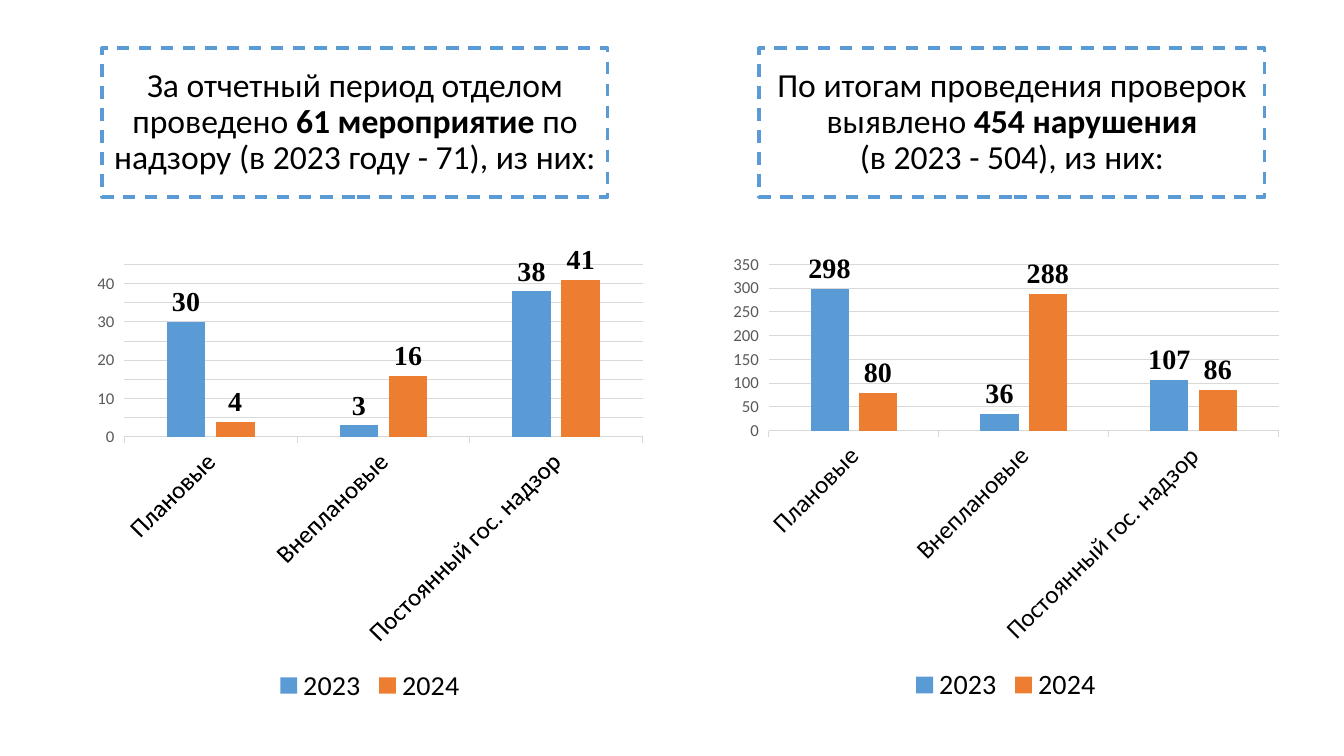
from pptx import Presentation
from pptx.chart.data import CategoryChartData
from pptx.dml.color import RGBColor
from pptx.enum.chart import XL_CHART_TYPE, XL_LABEL_POSITION, XL_LEGEND_POSITION, XL_TICK_MARK
from pptx.enum.dml import MSO_LINE
from pptx.enum.shapes import MSO_SHAPE
from pptx.enum.text import MSO_ANCHOR, PP_ALIGN
from pptx.util import Emu, Pt

COLUMNS = XL_CHART_TYPE.COLUMN_CLUSTERED
OUTSIDE_END = XL_LABEL_POSITION.OUTSIDE_END
BOTTOM = XL_LEGEND_POSITION.BOTTOM
TICK_OUTSIDE = XL_TICK_MARK.OUTSIDE
DASH = MSO_LINE.DASH
RECTANGLE = MSO_SHAPE.RECTANGLE
MIDDLE = MSO_ANCHOR.MIDDLE
CENTER = PP_ALIGN.CENTER

EMU_PER_PX = 914400 / 100.8
BLUE, ORANGE, GRID, GRAY, BLACK = "5B9BD5", "ED7D31", "D9D9D9", "595959", "000000"
CATEGORIES = ["Плановые", "Внеплановые", "Постоянный гос. надзор"]
YEARS = [("2023", BLUE), ("2024", ORANGE)]
LABEL_ANGLE = -45

INSPECTIONS = {
    "heading": [[("За отчетный период отделом проведено ", False),
                 ("61 мероприятие ", True),
                 ("по надзору (в 2023 году - 71), из них:", False)]],
    "values": [(30, 3, 38), (4, 16, 41)],
    "top": 45,
    "step": 5,
}
VIOLATIONS = {
    "heading": [[("По итогам проведения проверок выявлено ", False),
                 ("454 нарушения", True)],
                [("(в 2023 - 504), из них:", False)]],
    "values": [(298, 36, 107), (80, 288, 86)],
    "top": 350,
    "step": 50,
}


def px(length):
    """Turn pixels into EMU."""
    return Emu(round(length * EMU_PER_PX))


def color(value):
    """Turn a hex string into a colour."""
    return RGBColor.from_string(value)


def style_font(font, size, name="Calibri", bold=False, hue=BLACK):
    """Set the look of a font."""
    font.size = Pt(size)
    font.name = name
    font.bold = bold
    font.color.rgb = color(hue)


def add_heading(page, box, paragraphs):
    """Place a dashed frame with a centred heading."""
    frame = page.shapes.add_shape(RECTANGLE, *map(px, box))
    frame.shadow.inherit = False
    frame.fill.background()
    frame.line.color.rgb = color(BLUE)
    frame.line.width = Pt(2.25)
    frame.line.dash_style = DASH
    text_frame = frame.text_frame
    text_frame.word_wrap = True
    text_frame.vertical_anchor = MIDDLE
    for index, spans in enumerate(paragraphs):
        para = text_frame.add_paragraph() if index else text_frame.paragraphs[0]
        para.alignment = CENTER
        para.line_spacing = 0.9
        for text, bold in spans:
            span = para.add_run()
            span.text = text
            style_font(span.font, 24, bold=bold)


def style_axes(chart, top, step):
    """Format both axes of a chart."""
    category_axis, value_axis = chart.category_axis, chart.value_axis
    for axis in (category_axis, value_axis):
        axis.major_tick_mark = TICK_OUTSIDE
    style_font(category_axis.tick_labels.font, 18)
    category_axis.format.line.color.rgb = color(GRID)
    category_axis.format.line.width = Pt(0.75)
    for body in category_axis._element.xpath("c:txPr/a:bodyPr"):
        body.set("rot", str(LABEL_ANGLE * 60000))
    style_font(value_axis.tick_labels.font, 12, hue=GRAY)
    value_axis.format.line.fill.background()
    value_axis.minimum_scale = 0
    value_axis.maximum_scale = top
    value_axis.major_unit = step
    grid_line = value_axis.major_gridlines.format.line
    grid_line.color.rgb = color(GRID)
    grid_line.width = Pt(0.75)


def add_year_chart(page, box, values, top, step):
    """Place a column chart that compares the years."""
    data = CategoryChartData()
    data.categories = CATEGORIES
    for (year, _), numbers in zip(YEARS, values):
        data.add_series(year, numbers)
    chart = page.shapes.add_chart(COLUMNS, *map(px, box), data).chart
    chart.has_title = False
    style_font(chart.font, 10)
    style_axes(chart, top, step)
    chart.has_legend = True
    chart.legend.position = BOTTOM
    chart.legend.include_in_layout = False
    style_font(chart.legend.font, 20)
    plot = chart.plots[0]
    plot.vary_by_categories = False
    plot.gap_width = 219
    plot.overlap = -27
    for series, (_, hue) in zip(plot.series, YEARS):
        series.format.fill.solid()
        series.format.fill.fore_color.rgb = color(hue)
        labels = series.data_labels
        labels.show_value = True
        labels.position = OUTSIDE_END
        style_font(labels.font, 20, "Times New Roman", True)


def add_panel(page, heading_left, chart_left, topic):
    """Place a heading with its chart below."""
    add_heading(page, (heading_left, 48, 506, 149), topic["heading"])
    add_year_chart(page, (chart_left, 245, 568, 463),
                   topic["values"], topic["top"], topic["step"])


def main():
    """Build and save the deck."""
    deck = Presentation()
    deck.slide_width, deck.slide_height = px(1344), px(756)
    page = deck.slides.add_slide(deck.slide_layouts[6])
    add_panel(page, 102, 86, INSPECTIONS)
    add_panel(page, 759, 722, VIOLATIONS)
    deck.save("out.pptx")


if __name__ == "__main__":
    main()
